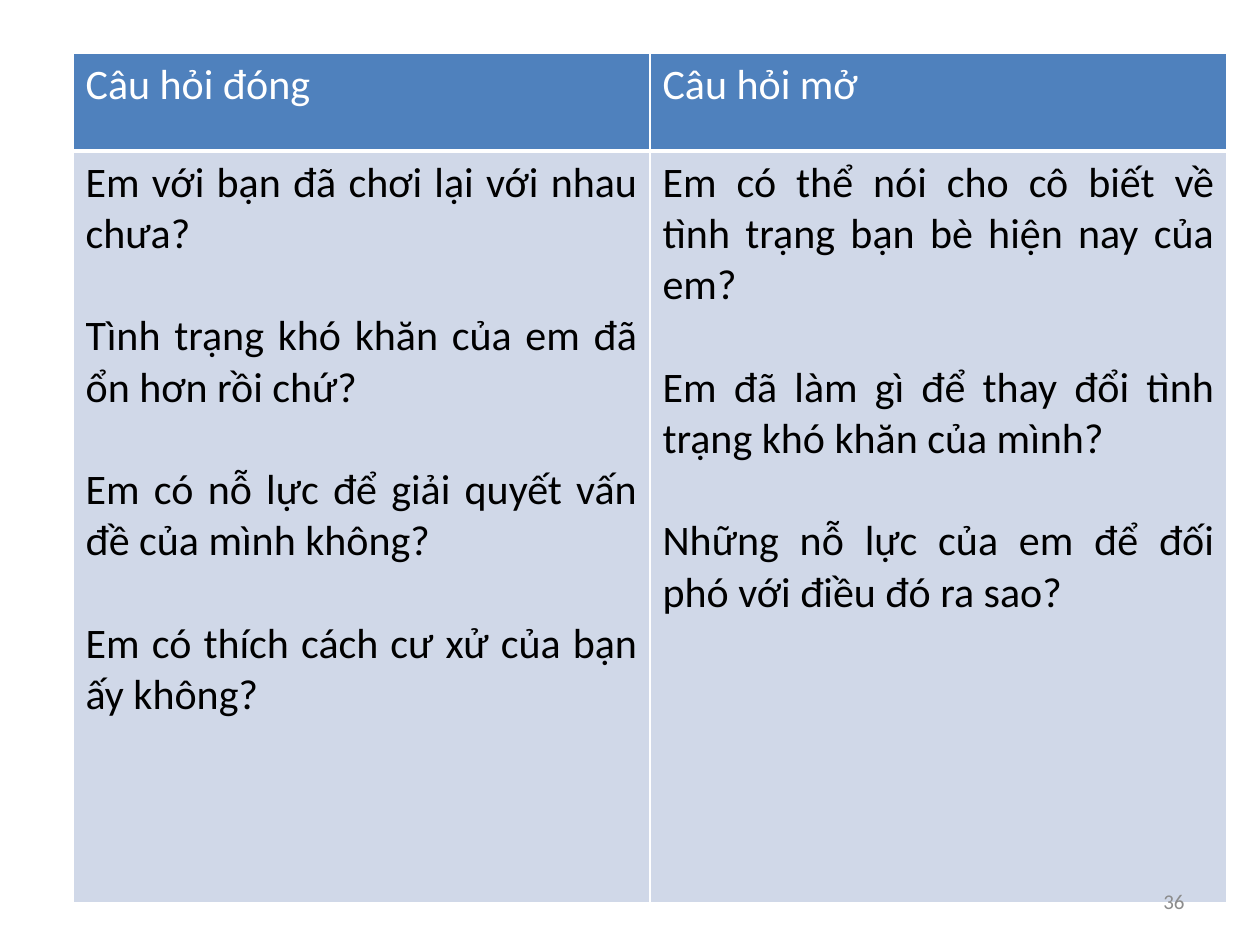
import pptx
import pptx.util
import pptx.dml.color
import pptx.enum.text
import pptx.oxml.ns
from lxml import etree

COLORS = {"header": "4F81BD", "body": "D0D8E8", "white": "FFFFFF",
          "black": "000000", "number": "8C8C8C"}
QUESTIONS = {
    "Câu hỏi đóng": [
        "Em với bạn đã chơi lại với nhau chưa?",
        "Tình trạng khó khăn của em đã ổn hơn rồi chứ?",
        "Em có nỗ lực để giải quyết vấn đề của mình không?",
        "Em có thích cách cư xử của bạn ấy không?",
    ],
    "Câu hỏi mở": [
        "Em có thể nói cho cô biết về tình trạng bạn bè hiện nay của em?",
        "Em đã làm gì để thay đổi tình trạng khó khăn của mình?",
        "Những nỗ lực của em để đối phó với điều đó ra sao?",
    ],
}
PAGE_NUMBER = "36"
ALIGN = pptx.enum.text.PP_ALIGN
ROW_STYLES = [
    {"fill": "header", "color": "white", "align": ALIGN.LEFT, "bottom": 3},
    {"fill": "body", "color": "black", "align": ALIGN.JUSTIFY, "bottom": 1},
]
COLUMN_WIDTH = 577
ROW_HEIGHTS = [98, 752]
QUESTION_GAP = 29.3


def px(length):
    return pptx.util.Emu(round(length * 914400 / 126))


def rgb(name):
    return pptx.dml.color.RGBColor.from_string(COLORS[name])


def write(frame, lines, size, color, align, gap=0):
    for index, line in enumerate(lines):
        paragraph = frame.paragraphs[0] if index == 0 else frame.add_paragraph()
        paragraph.alignment = align
        paragraph.space_before = pptx.util.Pt(gap if index else 0)
        run = paragraph.add_run()
        run.text = line
        run.font.color.rgb = rgb(color)
        font_format = {"name": "Calibri", "size": pptx.util.Pt(size), "bold": False}
        for attribute, value in font_format.items():
            setattr(run.font, attribute, value)


def add_borders(cell, bottom):
    properties = cell._tc.get_or_add_tcPr()
    qn = pptx.oxml.ns.qn
    widths = {"a:lnL": 1, "a:lnR": 1, "a:lnT": 1, "a:lnB": bottom}
    for position, (side, width) in enumerate(widths.items()):
        border = etree.Element(qn(side), w=str(pptx.util.Pt(width)))
        fill = etree.SubElement(border, qn("a:solidFill"))
        etree.SubElement(fill, qn("a:srgbClr"), val=COLORS["white"])
        properties.insert(position, border)


presentation = pptx.Presentation()
presentation.slide_width, presentation.slide_height = px(1260), px(945)
slide = presentation.slides.add_slide(presentation.slide_layouts[6])

comparison = slide.shapes.add_table(
    len(ROW_HEIGHTS), len(QUESTIONS), px(73), px(53),
    px(COLUMN_WIDTH * len(QUESTIONS)), px(sum(ROW_HEIGHTS))).table
comparison.horz_banding = False
for row, height in zip(comparison.rows, ROW_HEIGHTS):
    row.height = px(height)
for column, (heading, questions) in enumerate(QUESTIONS.items()):
    comparison.columns[column].width = px(COLUMN_WIDTH)
    for row, (lines, style) in enumerate(zip(([heading], questions), ROW_STYLES)):
        cell = comparison.cell(row, column)
        cell.fill.solid()
        cell.fill.fore_color.rgb = rgb(style["fill"])
        add_borders(cell, style["bottom"])
        write(cell.text_frame, lines, 24, style["color"], style["align"], QUESTION_GAP)

page_number = slide.shapes.add_textbox(px(903), px(876), px(294), px(50)).text_frame
page_number.word_wrap = True
page_number.vertical_anchor = pptx.enum.text.MSO_ANCHOR.MIDDLE
write(page_number, [PAGE_NUMBER], 12, "number", ALIGN.RIGHT)

presentation.save("out.pptx")
